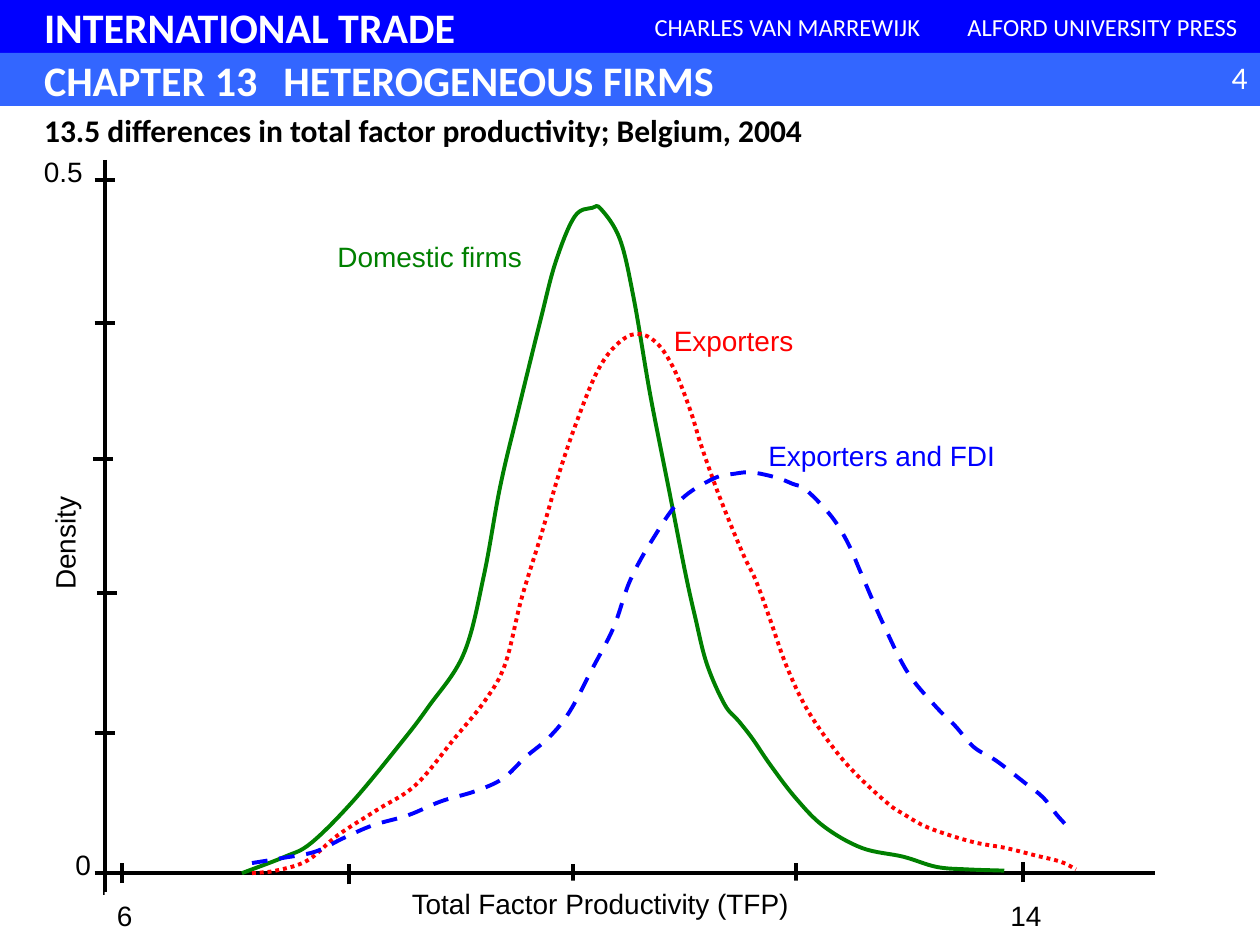
from dataclasses import dataclass
from typing import Optional

from lxml import etree
from pptx import Presentation
from pptx import util as u
from pptx.dml.color import RGBColor
from pptx.enum import dml, shapes, text
from pptx.oxml.ns import qn


@dataclass(frozen=True)
class Theme:
    black: str = "000000"
    white: str = "FFFFFF"
    navy: str = "0000FF"
    sky: str = "3366FF"
    green: str = "008000"
    red: str = "FF0000"
    head: str = "Calibri"
    body: str = "Arial"
    big: int = 24
    mid: int = 18
    label: int = 16
    small: int = 14
    line: float = 2.25


@dataclass(frozen=True)
class Band:
    text: str
    box: tuple
    fill: str
    size: int
    bold: bool = False
    inset: float = 0.1
    align: text.PP_ALIGN = text.PP_ALIGN.CENTER
    tab: float = 0


@dataclass(frozen=True)
class Label:
    text: str
    box: tuple
    color: str = Theme.black
    fill: Optional[str] = None
    turn: int = 0
    font: str = Theme.body
    size: int = Theme.label
    align: text.PP_ALIGN = text.PP_ALIGN.LEFT


@dataclass(frozen=True)
class Curve:
    color: str
    dash: Optional[dml.MSO_LINE]
    knots: tuple


T = Theme()
GRID = 2.54
LEFT, RIGHT = text.PP_ALIGN.LEFT, text.PP_ALIGN.RIGHT

BANDS = (
    Band("INTERNATIONAL TRADE", (0, 0, 10, 0.42), T.navy, T.big, True, 0.35, LEFT),
    Band("CHARLES VAN MARREWIJK", (5, 0, 2.5, 0.42), T.navy, T.small),
    Band("ALFORD UNIVERSITY PRESS", (7.5, 0.01, 2.5, 0.41), T.navy, T.small),
    Band("CHAPTER 13\tHETEROGENEOUS FIRMS", (0, 0.42, 10, 0.42), T.sky, T.big,
         True, 0.35, LEFT, 1.9),
)
PAGE = Label("4", (9.33, 0.41, 0.67, 0.4), T.white, font=T.head, size=T.mid, align=RIGHT)
LABELS = (
    Label("0", (0.5, 6.68, 0.34, 0.4)),
    Label("0.5", (0.25, 1.18, 0.55, 0.4)),
    Label("6", (0.83, 7.08, 0.34, 0.4), fill=T.white),
    Label("14", (7.92, 7.08, 0.48, 0.4), fill=T.white),
    Label("Density", (-0.02, 4.03, 1.1, 0.4), turn=270),
    Label("Total Factor Productivity (TFP)", (3.17, 6.99, 3.6, 0.4), fill=T.white),
    Label("Domestic firms", (2.58, 1.85, 2.08, 0.4), T.green),
    Label("Exporters", (5.25, 2.52, 1.27, 0.4), T.red),
    Label("Exporters and FDI", (6, 3.43, 2.33, 0.4), T.navy),
)
AXES = ((0.83, 1.27, 0.83, 7.1), (0.75, 6.93, 9.17, 6.93))
ROWS = ((0.75, 1.43), (0.75, 2.56), (0.74, 3.64), (0.77, 4.71), (0.75, 5.82))
COLS = ((0.97, 6.85), (2.77, 6.86), (4.55, 6.86), (6.32, 6.85), (8.12, 6.84))
TICK = 0.16

CURVES = (
    Curve(T.green, None, (
        (1.92, 6.93), (2.26, 6.8), (2.47, 6.69), (2.8, 6.36), (3.18, 5.9), (3.4, 5.61),
        (3.68, 5.19), (3.84, 4.57), (3.97, 3.86), (4.11, 3.27), (4.29, 2.54), (4.41, 2.08),
        (4.56, 1.72), (4.7, 1.65), (4.77, 1.66), (4.92, 1.9), (5.03, 2.37), (5.16, 3.13),
        (5.31, 3.89), (5.44, 4.55), (5.52, 4.91), (5.61, 5.27), (5.75, 5.59), (5.86, 5.72),
        (5.97, 5.86), (6.12, 6.08), (6.32, 6.34), (6.54, 6.56), (6.84, 6.73), (7.17, 6.8),
        (7.43, 6.88), (7.67, 6.9), (7.97, 6.91))),
    Curve(T.red, dml.MSO_LINE.ROUND_DOT, (
        (2, 6.93), (2.19, 6.91), (2.44, 6.83), (2.68, 6.63), (2.99, 6.43), (3.3, 6.23),
        (3.6, 5.87), (3.85, 5.56), (4.01, 5.27), (4.14, 4.75), (4.3, 4.23), (4.44, 3.75),
        (4.58, 3.34), (4.74, 2.95), (4.89, 2.74), (5.05, 2.65), (5.21, 2.72), (5.35, 2.93),
        (5.48, 3.26), (5.57, 3.55), (5.71, 3.94), (5.89, 4.38), (6, 4.61), (6.11, 4.91),
        (6.24, 5.28), (6.4, 5.62), (6.61, 5.93), (6.8, 6.15), (7.05, 6.38), (7.17, 6.46),
        (7.37, 6.57), (7.71, 6.68), (7.98, 6.73), (8.22, 6.79), (8.42, 6.84), (8.54, 6.9))),
    Curve(T.navy, dml.MSO_LINE.DASH, (
        (2, 6.85), (2.24, 6.81), (2.5, 6.76), (2.73, 6.65), (2.96, 6.55), (3.24, 6.47),
        (3.5, 6.36), (3.77, 6.28), (3.99, 6.18), (4.17, 6.01), (4.36, 5.85), (4.52, 5.65),
        (4.7, 5.31), (4.87, 4.98), (5, 4.61), (5.18, 4.28), (5.4, 3.97), (5.66, 3.8),
        (5.83, 3.76), (5.97, 3.75), (6.16, 3.79), (6.29, 3.84), (6.4, 3.89), (6.6, 4.1),
        (6.73, 4.31), (6.83, 4.54), (7, 4.93), (7.2, 5.33), (7.42, 5.6), (7.58, 5.76),
        (7.73, 5.93), (7.91, 6.04), (8.13, 6.21), (8.28, 6.33), (8.39, 6.47), (8.51, 6.6))),
)


def cm(*nums: float) -> list:
    return [u.Cm(n * GRID) for n in nums]


def rgb(code: str) -> RGBColor:
    return RGBColor.from_string(code)


def write(para, words: str, font: str, size: int, color: str, bold: bool = False) -> None:
    run = para.add_run()
    run.text = words
    run.font.name, run.font.size, run.font.bold = font, u.Pt(size), bold
    run.font.color.rgb = rgb(color)


def add_band(slide, band: Band) -> None:
    shape = slide.shapes.add_shape(shapes.MSO_SHAPE.RECTANGLE, *cm(*band.box))
    shape.shadow.inherit = False
    shape.fill.solid()
    shape.fill.fore_color.rgb = rgb(band.fill)
    shape.line.fill.background()
    frame = shape.text_frame
    frame.word_wrap = True
    frame.vertical_anchor = text.MSO_ANCHOR.MIDDLE
    frame.margin_left, = cm(band.inset)
    para = frame.paragraphs[0]
    para.alignment = band.align
    write(para, band.text, T.head, band.size, T.white, band.bold)
    if band.tab:
        tabs = etree.SubElement(para._p.get_or_add_pPr(), qn("a:tabLst"))
        etree.SubElement(tabs, qn("a:tab"), pos=str(cm(band.tab)[0]), algn="l")


def add_label(slide, label: Label) -> None:
    box = slide.shapes.add_textbox(*cm(*label.box))
    box.rotation = label.turn
    if label.fill:
        box.fill.solid()
        box.fill.fore_color.rgb = rgb(label.fill)
    box.text_frame.word_wrap = True
    para = box.text_frame.paragraphs[0]
    para.alignment = label.align
    write(para, label.text, label.font, label.size, label.color)


def add_line(slide, *ends: float) -> None:
    line = slide.shapes.add_connector(shapes.MSO_CONNECTOR.STRAIGHT, *cm(*ends))
    line.line.color.rgb = rgb(T.black)
    line.line.width = u.Pt(T.line)
    etree.SubElement(line._element.spPr, qn("a:effectLst"))


def bend(knots: tuple) -> list:
    def mirror(end: tuple, near: tuple) -> tuple:
        return tuple(2 * e - n for e, n in zip(end, near))

    pts = [mirror(*knots[:2]), *knots, mirror(knots[-1], knots[-2])]
    path = []
    for a, b, c, d in zip(pts, pts[1:], pts[2:], pts[3:]):
        path.append(tuple(q + (r - p) / 6 for p, q, r in zip(a, b, c)))
        path.append(tuple(r - (s - q) / 6 for q, r, s in zip(b, c, d)))
        path.append(c)
    return path


def add_curve(slide, curve: Curve) -> None:
    pen = slide.shapes.build_freeform(*cm(*curve.knots[0]))
    pen.add_line_segments([cm(*pt) for pt in bend(curve.knots)], close=False)
    shape = pen.convert_to_shape()
    steps = list(shape._element.iter(qn("a:lnTo")))
    for trio in zip(steps[::3], steps[1::3], steps[2::3]):
        cubic = etree.SubElement(trio[0].getparent(), qn("a:cubicBezTo"))
        for step in trio:
            cubic.append(step[0])
            step.getparent().remove(step)
    shape.shadow.inherit = False
    shape.fill.background()
    shape.line.color.rgb = rgb(curve.color)
    shape.line.width = u.Pt(T.line)
    if curve.dash:
        shape.line.dash_style = curve.dash


def add_title(slide, words: str) -> None:
    title = slide.shapes.title
    title.left, title.top, title.width, title.height = cm(0.25, 0.83, 6.74, 0.4)
    frame = title.text_frame
    frame.auto_size = text.MSO_AUTO_SIZE.NONE
    frame.vertical_anchor = text.MSO_ANCHOR.TOP
    frame.word_wrap = True
    frame.paragraphs[0].alignment = LEFT
    write(frame.paragraphs[0], words, T.head, T.mid, T.black, True)


def main() -> None:
    deck = Presentation()
    deck.slide_width, deck.slide_height = cm(10, 7.5)
    slide = deck.slides.add_slide(deck.slide_layouts[5])
    add_title(slide, "13.5 differences in total factor productivity; Belgium, 2004")
    for band in BANDS:
        add_band(slide, band)
    add_label(slide, PAGE)
    for axis in AXES:
        add_line(slide, *axis)
    for x, y in ROWS:
        add_line(slide, x, y, x + TICK, y)
    for x, y in COLS:
        add_line(slide, x, y + TICK, x, y)
    for label in LABELS:
        add_label(slide, label)
    for curve in CURVES:
        add_curve(slide, curve)
    deck.save("out.pptx")


if __name__ == "__main__":
    main()
